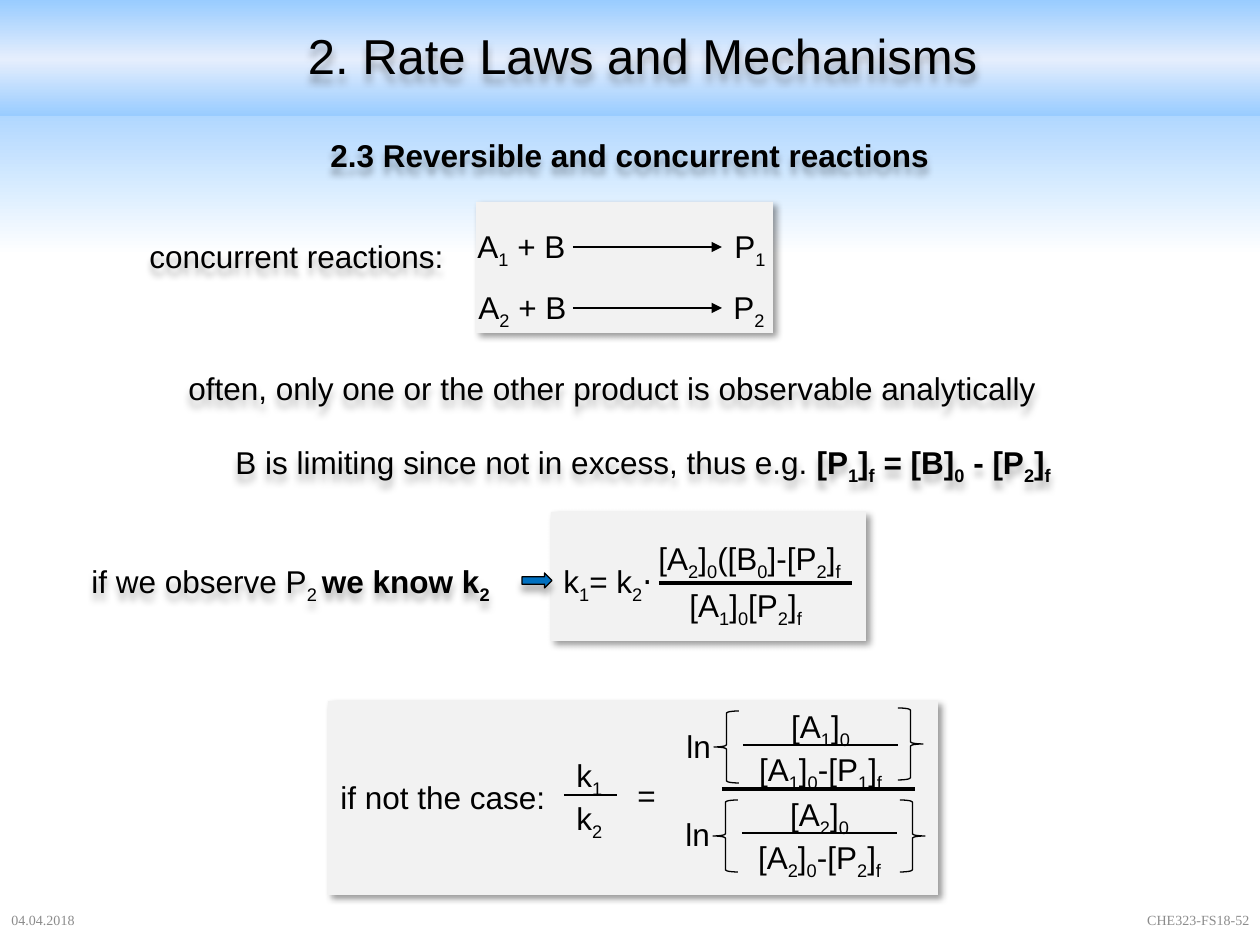
from dataclasses import dataclass

from pptx import Presentation
from pptx import util as u
from pptx.dml.color import RGBColor
from pptx.enum import shapes, text
from pptx.oxml import ns
from pptx.oxml.xmlchemy import OxmlElement

SCALE = 914400 / 126


@dataclass(frozen=True)
class Theme:
    ink: str = "000000"
    grey: str = "8C8C8C"
    panel: str = "F2F2F2"
    arrow: str = "0070C0"
    sky: str = "99CCFF"
    pale: str = "E5EEFD"
    white: str = "FFFFFF"
    font: str = "Arial"
    serif: str = "Times New Roman"
    title: int = 28
    body: int = 18
    foot: int = 8


@dataclass(frozen=True)
class Shade:
    alpha: int
    blur: int
    dist: int
    angle: int


@dataclass(frozen=True)
class Box:
    x: int
    y: int
    w: int
    h: int = 50


@dataclass(frozen=True)
class Rule:
    x: int
    end: int
    y: int
    width: float = 1.5
    head: bool = False


T = Theme()
DEEP = Shade(40, 4, 3, 45)
DROP = Shade(30, 4, 4, 90)
KIND = shapes.MSO_SHAPE
ALIGN = text.PP_ALIGN


def px(n: int) -> int:
    return round(n * SCALE)


def place(box: Box) -> list[int]:
    return [px(n) for n in (box.x, box.y, box.w, box.h)]


def node(parent, tag: str, **attrs):
    item = OxmlElement(tag)
    for key, val in attrs.items():
        item.set(key, str(val))
    parent.append(item)
    return item


def cast(shape, shade: Shade) -> None:
    """Give the shape, or its text if unfilled, a soft shadow."""
    shape.shadow.inherit = False
    effects = shape._element.spPr.find(ns.qn("a:effectLst"))
    outer = node(effects, "a:outerShdw", blurRad=u.Pt(shade.blur),
                 dist=u.Pt(shade.dist), dir=shade.angle * 60000,
                 algn="tl", rotWithShape=0)
    color = node(outer, "a:srgbClr", val=T.ink)
    node(color, "a:alpha", val=shade.alpha * 1000)


def blend(fill, root, stops: list[tuple[int, str]]) -> None:
    """Fill with a top-to-bottom gradient."""
    fill.gradient()
    fill.gradient_angle = 270
    group = next(root.iter(ns.qn("a:gsLst")))
    for old in list(group):
        group.remove(old)
    for pos, color in stops:
        node(node(group, "a:gs", pos=pos * 1000), "a:srgbClr", val=color)


def write(slide, words: str, box: Box, *, size=T.body, font=T.font,
          color=T.ink, align=ALIGN.LEFT, bold=False, wrap=False, shade=None):
    """Write text; *...* switches bold and ~...~ marks a subscript."""
    shape = slide.shapes.add_textbox(*place(box))
    frame = shape.text_frame
    frame.word_wrap = wrap
    if wrap:
        frame.vertical_anchor = text.MSO_ANCHOR.MIDDLE
    else:
        frame.auto_size = text.MSO_AUTO_SIZE.SHAPE_TO_FIT_TEXT
    for n, line in enumerate(words.split("\n")):
        para = frame.add_paragraph() if n else frame.paragraphs[0]
        para.alignment = align
        for i, part in enumerate(line.split("*")):
            for j, piece in enumerate(part.split("~")):
                if not piece:
                    continue
                run = para.add_run()
                run.text = piece
                run.font.size = u.Pt(size)
                run.font.name = font
                run.font.bold = bold or i % 2 == 1
                run.font.color.rgb = RGBColor.from_string(color)
                if j % 2:
                    run._r.get_or_add_rPr().set("baseline", "-25000")
    if shade:
        cast(shape, shade)


def draw(slide, kind, box: Box, *, fill=None, line=None, shade=None, flip=False):
    shape = slide.shapes.add_shape(kind, *place(box))
    shape.shadow.inherit = False
    if fill:
        shape.fill.solid()
        shape.fill.fore_color.rgb = RGBColor.from_string(fill)
    else:
        shape.fill.background()
    if line:
        shape.line.color.rgb = RGBColor.from_string(line)
        shape.line.width = u.Pt(0.75)
    else:
        shape.line.fill.background()
    if shade:
        cast(shape, shade)
    if flip:
        shape._element.spPr.xfrm.set("flipH", "1")
    return shape


def stroke(slide, rule: Rule) -> None:
    line = slide.shapes.add_connector(
        shapes.MSO_CONNECTOR.STRAIGHT,
        px(rule.x), px(rule.y), px(rule.end), px(rule.y))
    line.line.color.rgb = RGBColor.from_string(T.ink)
    line.line.width = u.Pt(rule.width)
    props = line._element.spPr
    if rule.head:
        node(props.find(ns.qn("a:ln")), "a:tailEnd", type="triangle")
    node(props, "a:effectLst")


def panel(slide, box: Box) -> None:
    draw(slide, KIND.RECTANGLE, box, fill=T.panel, shade=DEEP)


def frame(slide) -> None:
    """Draw background, title band and footer."""
    blend(slide.background.fill, slide._element, [(8, T.sky), (27, T.white)])
    band = draw(slide, KIND.RECTANGLE, Box(0, 0, 1260, 116))
    blend(band.fill, band._element, [(0, T.sky), (51, T.pale), (100, T.sky)])
    foot = dict(size=T.foot, font=T.serif, color=T.grey, wrap=True)
    write(slide, "04.04.2018", Box(-1, 895, 284), **foot)
    write(slide, "CHE323-FS18-52", Box(978, 895, 284), align=ALIGN.RIGHT, **foot)
    write(slide, "2. Rate Laws and Mechanisms", Box(107, 30, 1071, 49),
          size=T.title, align=ALIGN.CENTER, wrap=True, shade=DROP)
    write(slide, "2.3 Reversible and concurrent reactions",
          Box(318, 130, 649), bold=True, shade=DROP)


def scheme(slide) -> None:
    """Draw the two concurrent reactions."""
    panel(slide, Box(476, 202, 297, 131))
    write(slide, "concurrent reactions:", Box(137, 231, 323), shade=DROP)
    for n, left, right, top in ((1, 465, 722, 221), (2, 466, 721, 282)):
        write(slide, f"A~{n}~ + B", Box(left, top, 116))
        stroke(slide, Rule(573, 722, top + 26, head=True))
        write(slide, f"P~{n}~", Box(right, top, 58))


def known(slide) -> None:
    """Draw the remarks and the result for a known k2."""
    write(slide, "often, only one or the other product is observable analytically",
          Box(176, 363, 881), shade=DROP)
    write(slide, "B is limiting since not in excess, thus e.g. "
          "*[P~1~]~f~ = [B]~0~ - [P~2~]~f~*", Box(223, 437, 854), shade=DROP)
    panel(slide, Box(551, 512, 315, 129))
    write(slide, "if we observe P~2 ~*we know k~2~*", Box(79, 556, 436), shade=DROP)
    draw(slide, KIND.RIGHT_ARROW, Box(522, 573, 30, 15),
         fill=T.arrow, line=T.ink, shade=DROP)
    write(slide, "k~1~= k~2~⋅", Box(551, 556, 116))
    write(slide, "[A~2~]~0~([B~0~]-[P~2~]~f~", Box(646, 533, 219))
    write(slide, "[A~1~]~0~[P~2~]~f~", Box(677, 580, 145))
    stroke(slide, Rule(659, 852, 583, 2))


def ratio(slide) -> None:
    """Draw k1 / k2 as a quotient of logarithms."""
    panel(slide, Box(328, 701, 610, 194))
    write(slide, "if not the case:", Box(328, 772, 241))
    write(slide, "k~1~\nk~2~", Box(564, 750, 53, 89))
    stroke(slide, Rule(564, 617, 795))
    write(slide, "=", Box(625, 770, 44))
    stroke(slide, Rule(722, 915, 789, 2))
    for n, x, top, left, right in (
            (1, 743, 701, Box(714, 711, 25, 72), Box(898, 708, 25, 72)),
            (2, 742, 789, Box(713, 800, 25, 72), Box(900, 800, 25, 72))):
        write(slide, f"[A~{n}~]~0~\n[A~{n}~]~0~-[P~{n}~]~f~",
              Box(x, top, 155, 89), align=ALIGN.CENTER)
        stroke(slide, Rule(x, x + 155, top + 44))
        draw(slide, KIND.LEFT_BRACE, left, line=T.ink)
        draw(slide, KIND.LEFT_BRACE, right, line=T.ink, flip=True)
        write(slide, "ln", Box(x - 69, top + 20, 50))


def main() -> None:
    deck = Presentation()
    deck.slide_width, deck.slide_height = px(1260), px(945)
    slide = deck.slides.add_slide(deck.slide_layouts[6])
    for part in (frame, ratio, known, scheme):
        part(slide)
    deck.save("out.pptx")


if __name__ == "__main__":
    main()
